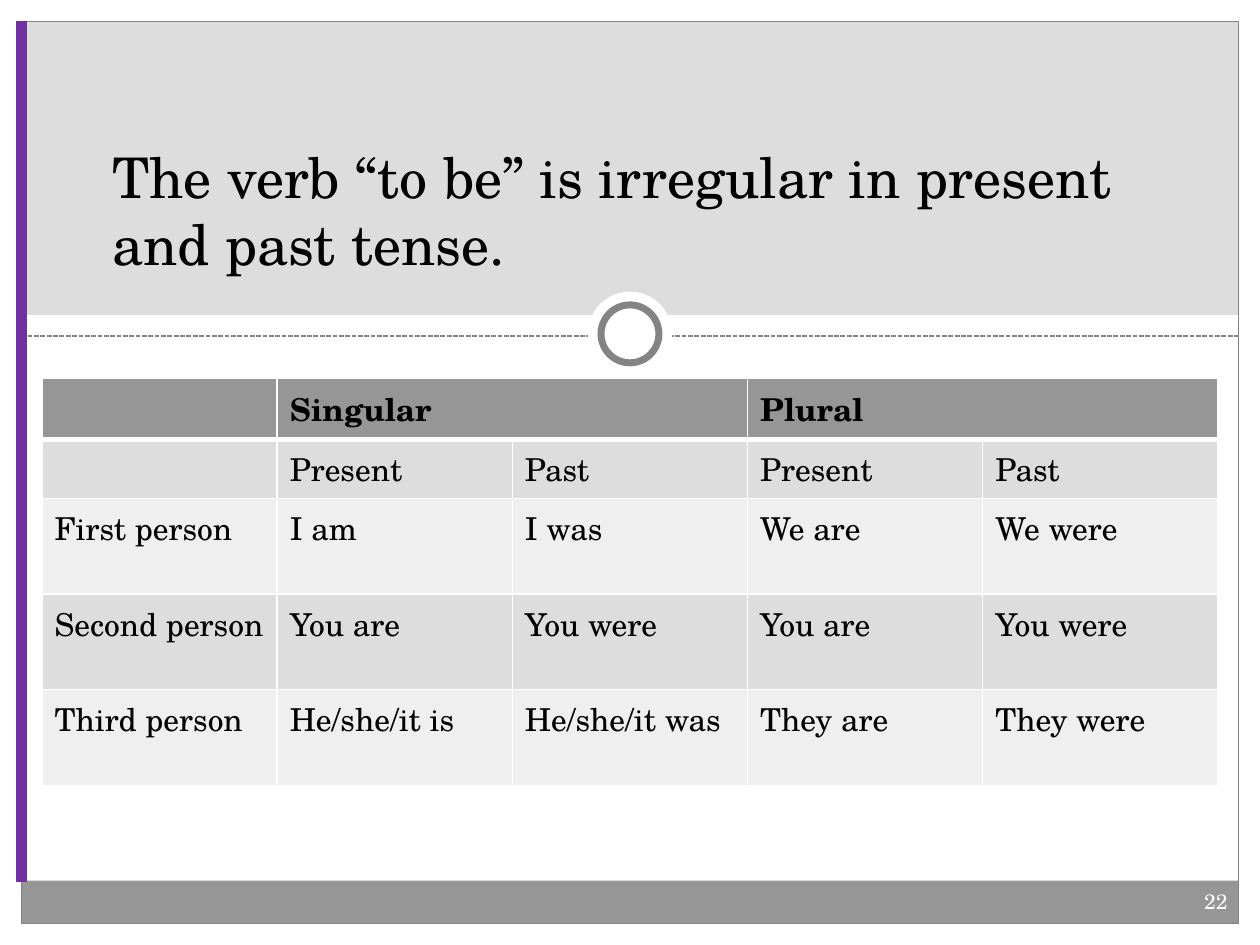
from dataclasses import dataclass
from lxml import etree
from pptx import Presentation
from pptx.dml.color import RGBColor
from pptx.enum.dml import MSO_LINE
from pptx.enum.shapes import MSO_CONNECTOR, MSO_SHAPE
from pptx.enum.text import MSO_ANCHOR, MSO_AUTO_SIZE, PP_ALIGN
from pptx.oxml.ns import qn
from pptx.util import Inches, Pt

RECT, OVAL = MSO_SHAPE.RECTANGLE, MSO_SHAPE.OVAL
LINE, DASH = MSO_CONNECTOR.STRAIGHT, MSO_LINE.SQUARE_DOT
LEFT, RIGHT, LOW = PP_ALIGN.LEFT, PP_ALIGN.RIGHT, MSO_ANCHOR.BOTTOM
FIXED = MSO_AUTO_SIZE.NONE


@dataclass(frozen=True)
class Theme:
    font: str = "TeX Gyre Schola"
    ink: str = "000000"
    white: str = "FFFFFF"
    panel: str = "DDDDDD"
    pale: str = "EFEFEF"
    band: str = "969696"
    rule: str = "848484"
    accent: str = "7030A0"
    head: int = 32
    body: int = 18
    note: int = 12


T = Theme()
TITLE = "The verb “to be” is irregular in present and past tense."
PAGE = "22"
ROWS = [
    ("", "Singular", "", "Plural", ""),
    ("", "Present", "Past", "Present", "Past"),
    ("First person", "I am", "I was", "We are", "We were"),
    ("Second person", "You are", "You were", "You are", "You were"),
    ("Third person", "He/she/it is", "He/she/it was", "They are", "They were"),
]
SPANS = [(1, 2), (3, 4)]
HIGHS = [0.44, 0.44, 0.76, 0.76, 0.76]

WIDE, HIGH, EDGE = 10, 7.5, 0.17
SPAN = WIDE - 2 * EDGE
FOOT = 6.99
MID = (WIDE / 2, 2.65)


def tone(code):
    return RGBColor.from_string(code)


def paint(fill, code):
    fill.solid()
    fill.fore_color.rgb = tone(code)


def write(frame, text, size, color, bold=False, align=LEFT):
    para = frame.paragraphs[0]
    para.alignment = align
    run = para.add_run()
    run.text = text
    run.font.name, run.font.size = T.font, Pt(size)
    run.font.bold, run.font.color.rgb = bold, tone(color)


def block(shapes, kind, box, fill=None, line=None, width=0.75):
    shape = shapes.add_shape(kind, *map(Inches, box))
    shape.shadow.inherit = False
    if fill:
        paint(shape.fill, fill)
    else:
        shape.fill.background()
    if line:
        shape.line.color.rgb, shape.line.width = tone(line), Pt(width)
    else:
        shape.line.fill.background()
    return shape


def disc(shapes, size, **style):
    x, y = MID
    block(shapes, OVAL, (x - size / 2, y - size / 2, size, size), T.white, **style)


def stroke(shapes, start, end, color, width):
    link = shapes.add_connector(LINE, *map(Inches, start + end))
    link.line.color.rgb, link.line.width = tone(color), Pt(width)
    etree.SubElement(link._element.spPr, qn("a:effectLst"))
    return link


def edge(cell, side, width):
    props = cell._tc.get_or_add_tcPr()
    line = etree.SubElement(props, qn("a:" + side), w=str(Pt(width)))
    fill = etree.SubElement(line, qn("a:solidFill"))
    etree.SubElement(fill, qn("a:srgbClr"), val=T.white)


def frame_page(shapes):
    for box in [
        (0, HIGH - EDGE, WIDE, EDGE),
        (0, 0, WIDE, EDGE),
        (WIDE - EDGE, 0, EDGE, HIGH),
    ]:
        block(shapes, RECT, box, T.white)
    strip = block(shapes, RECT, (EDGE, 2.5, SPAN, 0.33), T.white)
    block(shapes, RECT, (EDGE, EDGE, SPAN, 2.5 - EDGE), T.panel)
    block(shapes, RECT, (EDGE, FOOT, SPAN, HIGH - EDGE - FOOT), T.band)
    block(shapes, RECT, (EDGE, EDGE, SPAN, HIGH - 2 * EDGE), line=T.rule)
    rule = stroke(shapes, (EDGE, 2.67), (WIDE - EDGE, 2.67), T.rule, 0.9)
    rule.line.dash_style = DASH
    rule.begin_connect(strip, 1)
    rule.end_connect(strip, 3)
    disc(shapes, 0.67)
    disc(shapes, 0.46, line=T.rule, width=4)


def add_page(shapes):
    box = shapes.add_textbox(*map(Inches, (5.92, 7, 3.92, 0.4)))
    box.text_frame.word_wrap = True
    write(box.text_frame, PAGE, T.note, T.white, align=RIGHT)


def set_title(shapes):
    title = shapes.title
    title.left, title.top, title.width, title.height = map(
        Inches, (0.79, 0.58, 8.5, 1.67))
    frame = title.text_frame
    frame.word_wrap, frame.auto_size = True, FIXED
    frame.vertical_anchor = LOW
    write(frame, TITLE, T.head, T.ink)
    shapes._spTree.append(title._element)


def add_grid(shapes):
    wide = WIDE * 14 / 15
    box = ((WIDE - wide) / 2, 3, wide, sum(HIGHS))
    grid = shapes.add_table(len(ROWS), len(ROWS[0]), *map(Inches, box)).table
    for col in grid.columns:
        col.width = Inches(wide / len(ROWS[0]))
    for r, (row, high) in enumerate(zip(ROWS, HIGHS)):
        grid.rows[r].height = Inches(high)
        shade = T.band if r == 0 else (T.panel if r % 2 else T.pale)
        for c, text in enumerate(row):
            cell = grid.cell(r, c)
            for side in ("lnL", "lnR", "lnT", "lnB"):
                thick = (r, side) in ((0, "lnB"), (1, "lnT"))
                edge(cell, side, 3 if thick else 1)
            paint(cell.fill, shade)
            if text:
                write(cell.text_frame, text, T.body, T.ink, bold=r == 0)
    for first, last in SPANS:
        grid.cell(0, first).merge(grid.cell(0, last))


def main():
    deck = Presentation()
    deck.slide_width, deck.slide_height = Inches(WIDE), Inches(HIGH)
    shapes = deck.slides.add_slide(deck.slide_layouts[5]).shapes
    frame_page(shapes)
    add_page(shapes)
    set_title(shapes)
    stroke(shapes, (EDGE, EDGE), (EDGE, 7), T.accent, 6)
    add_grid(shapes)
    deck.save("out.pptx")


if __name__ == "__main__":
    main()
